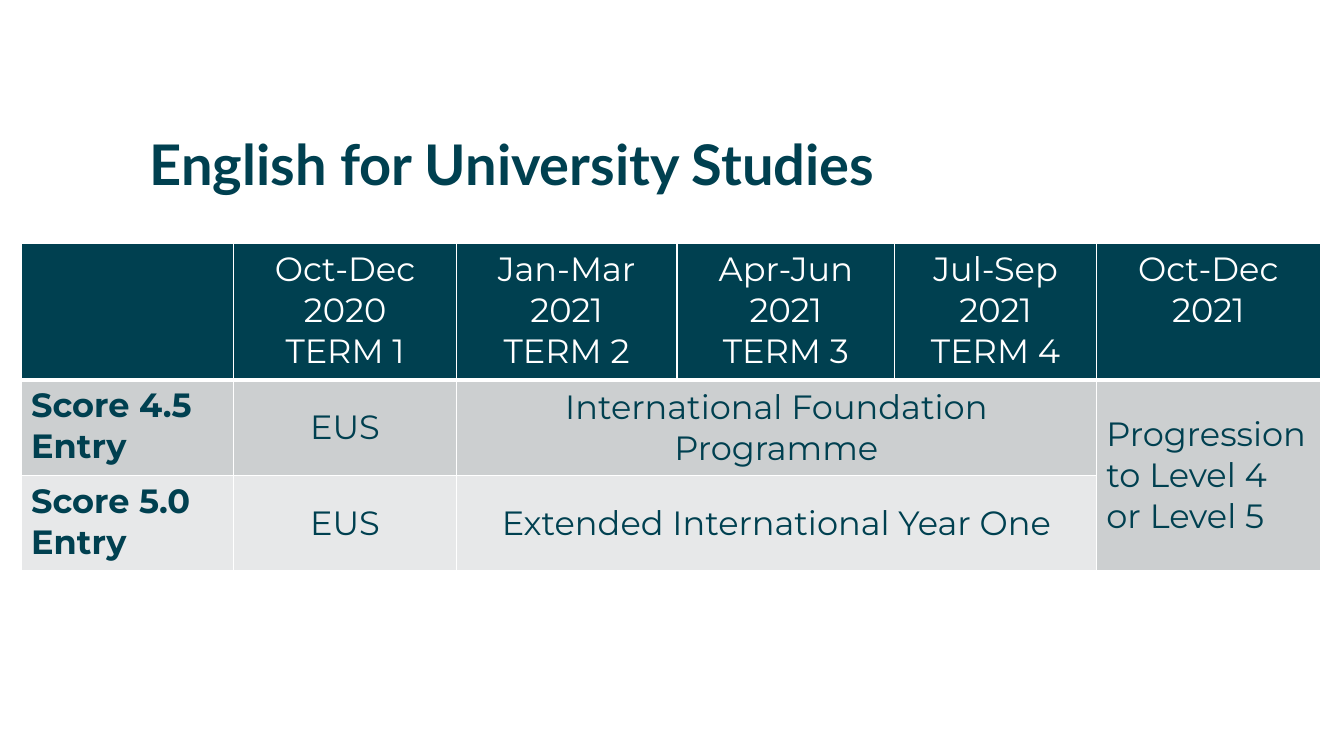
from dataclasses import dataclass

from lxml import etree
from pptx import Presentation
from pptx.dml.color import RGBColor
from pptx.enum.text import MSO_ANCHOR, PP_ALIGN
from pptx.oxml.ns import qn
from pptx.slide import Slide
from pptx.table import Table, _Cell
from pptx.util import Cm, Pt

LEFT, CENTER = PP_ALIGN.LEFT, PP_ALIGN.CENTER
TOP, MIDDLE = MSO_ANCHOR.TOP, MSO_ANCHOR.MIDDLE


@dataclass(frozen=True)
class Theme:
    teal: str = "004050"
    white: str = "FFFFFF"
    grey: str = "CCCFD0"
    pale: str = "E7E8E9"
    title_font: str = "Lato"
    body_font: str = "Montserrat"
    title_size: int = 40
    body_size: int = 24
    rule: int = 1
    header_rule: int = 3


@dataclass(frozen=True)
class Entry:
    row: int
    col: int
    text: str
    align: PP_ALIGN = CENTER
    anchor: MSO_ANCHOR = MIDDLE
    bold: bool = False
    rows: int = 1
    cols: int = 1


THEME = Theme()
COL_WIDTHS = (5.36, 5.61, 5.56, 5.49, 5.08, 5.64)
ROW_HEIGHTS = (3.43, 2.41, 2.41)
ROW_FILLS = (THEME.teal, THEME.grey, THEME.pale)
PERIODS = (
    "Oct-Dec 2020\nTERM 1",
    "Jan-Mar 2021\nTERM 2",
    "Apr-Jun 2021\nTERM 3",
    "Jul-Sep 2021\nTERM 4",
    "Oct-Dec 2021",
)
ENTRIES = [Entry(0, c, text, anchor=TOP) for c, text in enumerate(PERIODS, 1)] + [
    Entry(1, 0, "Score 4.5 Entry", LEFT, TOP, bold=True),
    Entry(1, 1, "EUS"),
    Entry(1, 2, "International Foundation Programme", cols=3),
    Entry(1, 5, "Progression to Level 4 or Level 5", LEFT, rows=2),
    Entry(2, 0, "Score 5.0 Entry", LEFT, TOP, bold=True),
    Entry(2, 1, "EUS"),
    Entry(2, 2, "Extended International Year One", cols=3),
]


def add_title(s: Slide, text: str) -> None:
    tf = s.shapes.add_textbox(Cm(3.78), Cm(3.45), Cm(26.34), Cm(1.45)).text_frame
    tf.word_wrap = True
    tf.margin_left = tf.margin_top = tf.margin_right = tf.margin_bottom = 0
    p = tf.paragraphs[0]
    p.text = text
    p.line_spacing = 0.9
    p.font.name = THEME.title_font
    p.font.size = Pt(THEME.title_size)
    p.font.bold = True
    p.font.color.rgb = RGBColor.from_string(THEME.teal)


def style_cell(cell: _Cell, fill: str, bottom: int) -> None:
    tcPr = cell._tc.get_or_add_tcPr()
    for side in "LRTB":
        width = bottom if side == "B" else THEME.rule
        ln = etree.SubElement(tcPr, qn(f"a:ln{side}"), w=str(Pt(width)))
        solid = etree.SubElement(ln, qn("a:solidFill"))
        etree.SubElement(solid, qn("a:srgbClr"), val=THEME.white)
    cell.fill.solid()
    cell.fill.fore_color.rgb = RGBColor.from_string(fill)


def write_entry(table: Table, entry: Entry) -> None:
    cell = table.cell(entry.row, entry.col)
    if entry.rows * entry.cols > 1:
        cell.merge(table.cell(entry.row + entry.rows - 1, entry.col + entry.cols - 1))
    cell.text = entry.text
    cell.vertical_anchor = entry.anchor
    color = THEME.teal if entry.row else THEME.white
    for p in cell.text_frame.paragraphs:
        p.alignment = entry.align
        p.font.name = THEME.body_font
        p.font.size = Pt(THEME.body_size)
        p.font.bold = entry.bold
        p.font.color.rgb = RGBColor.from_string(color)


def add_timetable(s: Slide) -> None:
    table = s.shapes.add_table(
        len(ROW_HEIGHTS), len(COL_WIDTHS), Cm(0.53), Cm(6.14),
        Cm(sum(COL_WIDTHS)), Cm(sum(ROW_HEIGHTS)),
    ).table
    for column, width in zip(table.columns, COL_WIDTHS):
        column.width = Cm(width)
    for i, (row, height, fill) in enumerate(zip(table.rows, ROW_HEIGHTS, ROW_FILLS)):
        row.height = Cm(height)
        for cell in row.cells:
            style_cell(cell, fill, THEME.rule if i else THEME.header_rule)
    for entry in ENTRIES:
        write_entry(table, entry)


def main() -> None:
    prs = Presentation()
    prs.slide_width, prs.slide_height = Cm(33.87), Cm(19.05)
    s = prs.slides.add_slide(prs.slide_layouts[6])
    add_title(s, "English for University Studies")
    add_timetable(s)
    prs.save("out.pptx")


if __name__ == "__main__":
    main()
